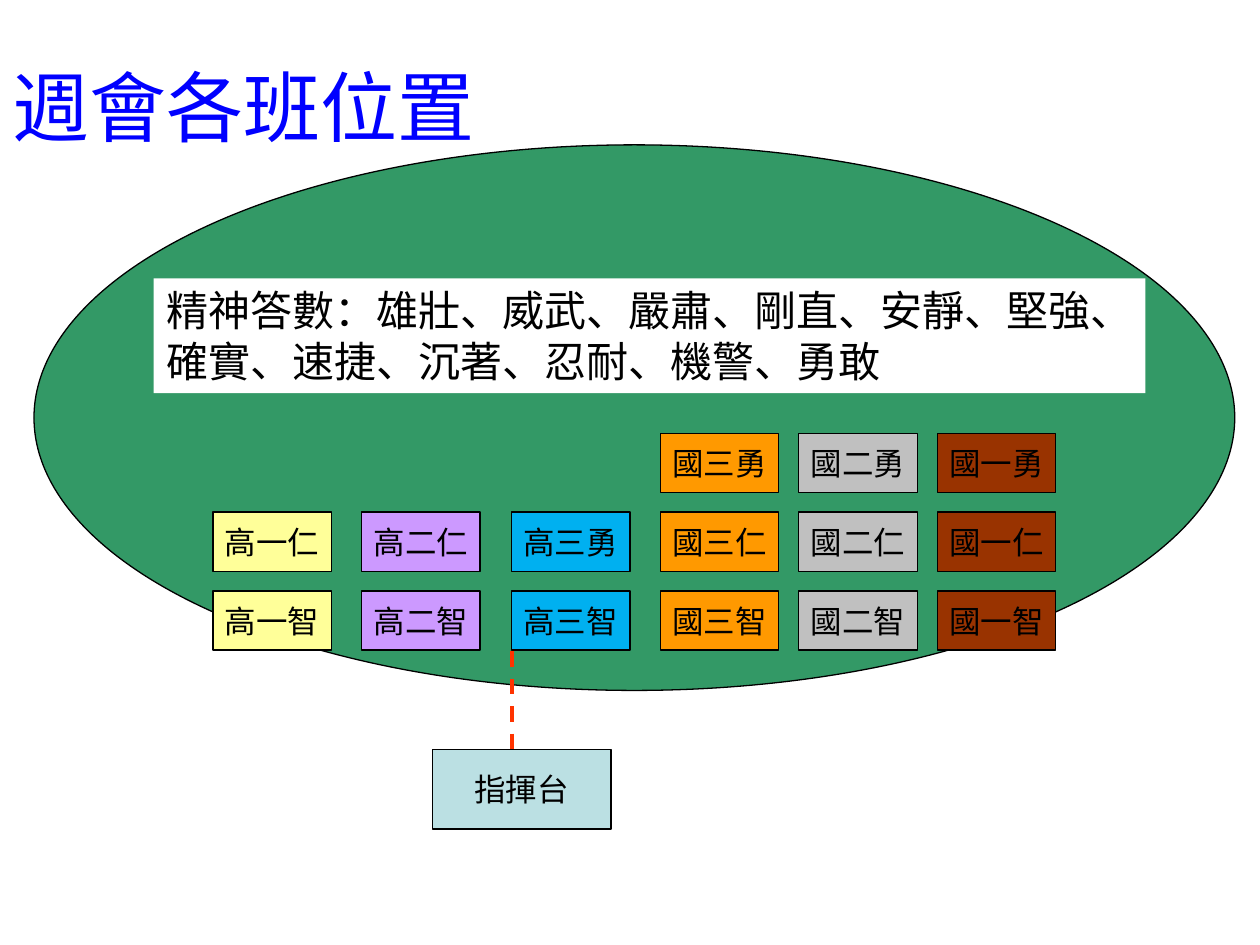
from pptx import Presentation
from pptx.dml.color import RGBColor
from pptx.enum.dml import MSO_LINE
from pptx.enum.shapes import MSO_CONNECTOR, MSO_SHAPE
from pptx.enum.text import MSO_ANCHOR, PP_ALIGN
from pptx.oxml.ns import qn
from pptx.util import Inches, Pt
from lxml import etree

RECT, OVAL = MSO_SHAPE.RECTANGLE, MSO_SHAPE.OVAL
STRAIGHT, DASH = MSO_CONNECTOR.STRAIGHT, MSO_LINE.DASH
MIDDLE, TOP = MSO_ANCHOR.MIDDLE, MSO_ANCHOR.TOP
CENTER, LEFT = PP_ALIGN.CENTER, PP_ALIGN.LEFT

LATIN, CJK = "Arial", "Noto Sans CJK SC"
COLORS = {
    "title": "0000FF", "text": "000000", "outline": "000000",
    "field": "339966", "banner": "FFFFFF", "podium": "BBE0E3",
    "guide": "FF3300",
    "高一": "FFFF99", "高二": "CC99FF", "高三": "00B0F0",
    "國三": "FF9900", "國二": "C0C0C0", "國一": "993300",
}
GRADES = [
    ("高一", 1.69, "智仁"), ("高二", 2.87, "智仁"), ("高三", 4.06, "智勇"),
    ("國三", 5.24, "智仁勇"), ("國二", 6.34, "智仁勇"), ("國一", 7.44, "智仁勇"),
]
FRONT_ROW, ROW_STEP = 4.69, 0.625
CLASS_W, CLASS_H = 0.94, 0.47


def rgb(name):
    return RGBColor.from_string(COLORS[name])


def write(sp, text, size, font=LATIN, color="text", align=LEFT,
          anchor=MIDDLE, wrap=True):
    tf = sp.text_frame
    tf.word_wrap = wrap
    tf.vertical_anchor = anchor
    p = tf.paragraphs[0]
    p.alignment = align
    r = p.add_run()
    r.text = text
    r.font.size = Pt(size)
    r.font.name = font
    r.font.color.rgb = rgb(color)


def add_block(s, kind, box, fill, outlined=True):
    sp = s.shapes.add_shape(kind, *map(Inches, box))
    sp.shadow.inherit = False
    sp.fill.solid()
    sp.fill.fore_color.rgb = rgb(fill)
    if outlined:
        sp.line.color.rgb = rgb("outline")
        sp.line.width = Pt(0.75)
    else:
        sp.line.fill.background()
    return sp


def add_label(s, box, text, fill):
    sp = add_block(s, RECT, box, fill)
    write(sp, text, 18, align=CENTER, wrap=False)


def add_title(s, text):
    sp = s.shapes.add_textbox(*map(Inches, (0, 0.21, 9, 1.25)))
    write(sp, text, 44, color="title")


def add_banner(s, text):
    sp = add_block(s, RECT, (1.22, 2.21, 7.87, 0.91), "banner", outlined=False)
    write(sp, text, 24, font=CJK, anchor=TOP)


def add_classes(s):
    for grade, left, names in GRADES:
        for row, name in enumerate(names):
            top = FRONT_ROW - row * ROW_STEP
            add_label(s, (left, top, CLASS_W, CLASS_H), grade + name, grade)


def add_guide(s, x, top, bottom):
    line = s.shapes.add_connector(STRAIGHT, *map(Inches, (x, top, x, bottom)))
    line.line.color.rgb = rgb("guide")
    line.line.width = Pt(2.25)
    line.line.dash_style = DASH
    etree.SubElement(line._element.spPr, qn("a:effectLst"))


def main():
    prs = Presentation()
    prs.slide_width, prs.slide_height = Inches(10), Inches(7.5)
    s = prs.slides.add_slide(prs.slide_layouts[6])
    add_title(s, "週會各班位置")
    add_block(s, OVAL, (0.27, 1.15, 9.53, 4.33), "field")
    add_label(s, (3.43, 5.95, 1.42, 0.63), "指揮台", "podium")
    add_classes(s)
    add_guide(s, 4.06, 5.17, 6.03)
    add_banner(s, "精神答數：雄壯、威武、嚴肅、剛直、安靜、堅強、"
                  "確實、速捷、沉著、忍耐、機警、勇敢")
    prs.save("out.pptx")


if __name__ == "__main__":
    main()
